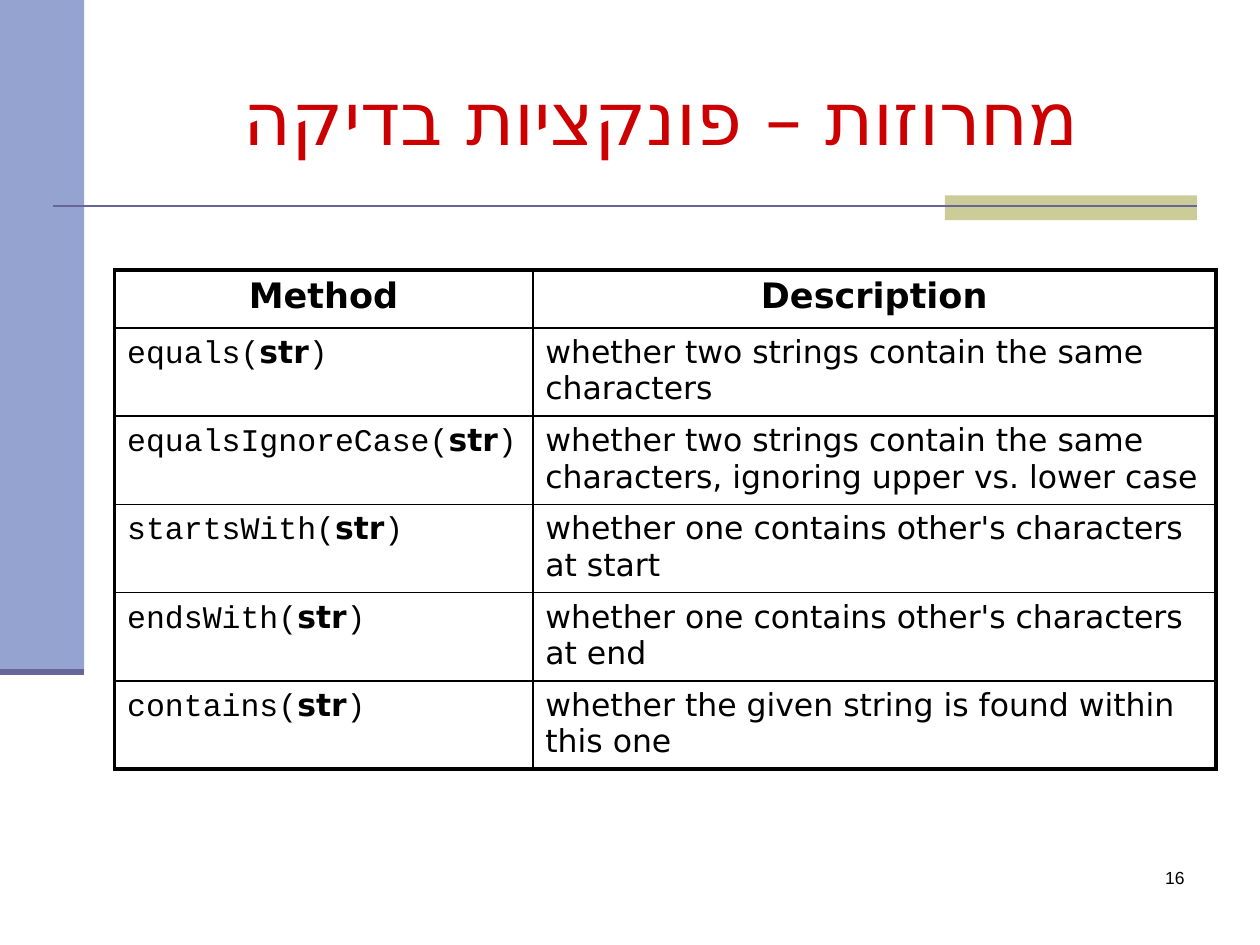
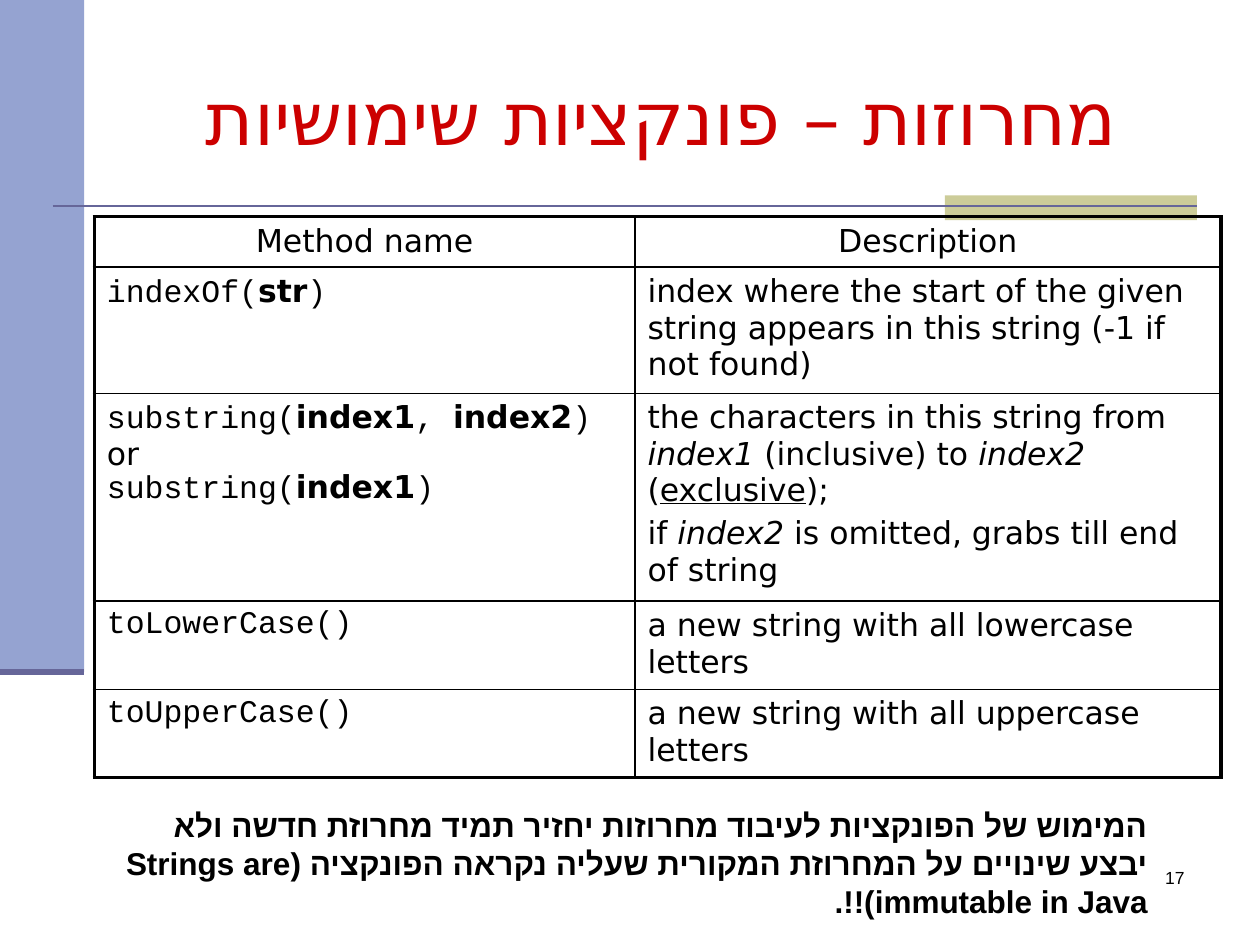
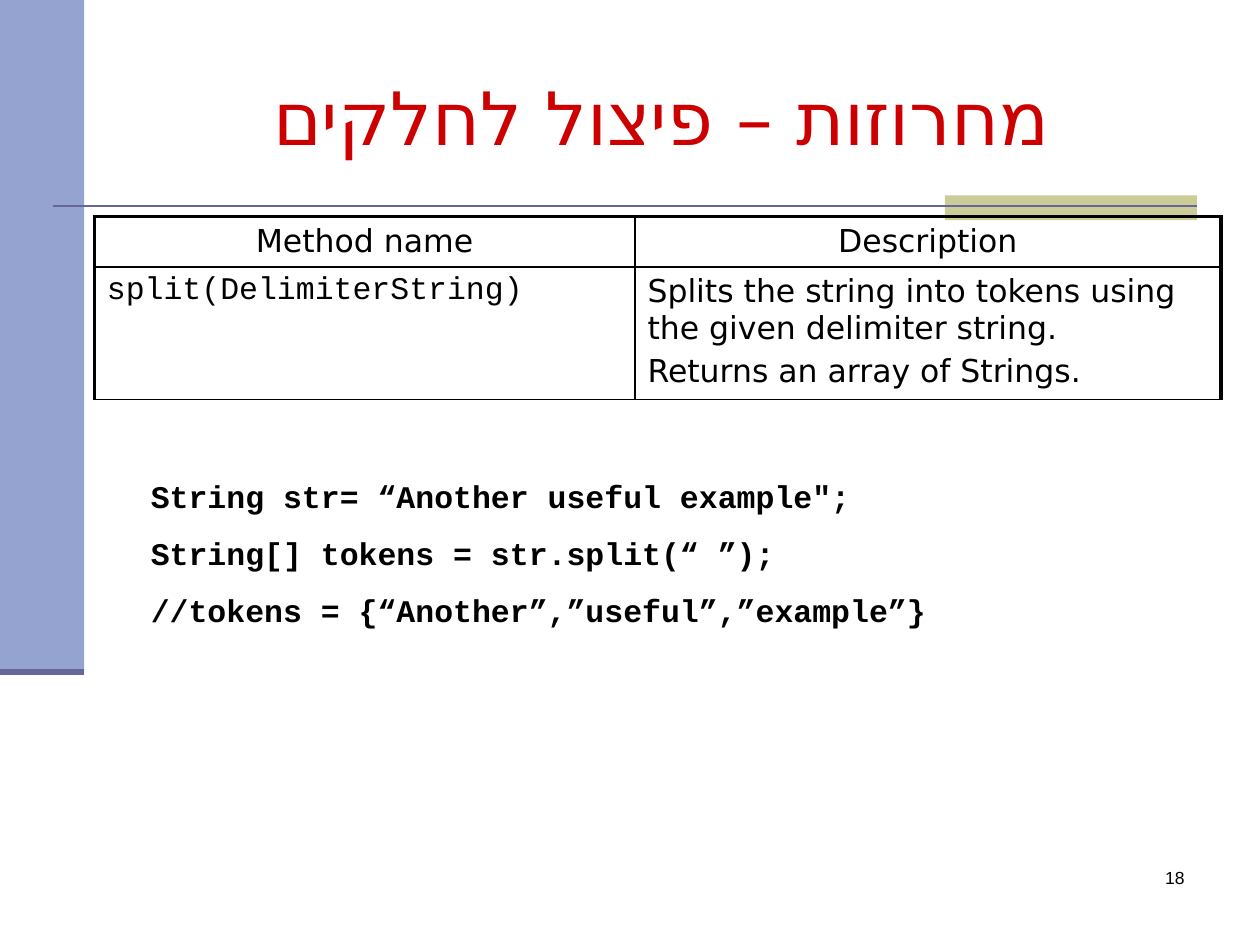
from pptx import Presentation
from pptx.dml.color import RGBColor
from pptx.enum.shapes import MSO_CONNECTOR, MSO_SHAPE
from pptx.enum.text import MSO_ANCHOR, PP_ALIGN
from pptx.oxml.ns import qn
from pptx.util import Cm, Pt
from lxml.etree import SubElement

COLORS = {
    "sidebar": "95A3D1",
    "accent": "CCCC99",
    "rule": "666699",
    "title": "CC0000",
    "text": "000000",
}
SANS = "DejaVu Sans"
MONO = "Courier New"
CODE = {"font": MONO}
ARGUMENT = {"bold": True}
ITALIC = {"italic": True}
UNDERLINE = {"underline": True}
PLAIN = {}
THICK, THIN = 2.25, 1


def color(name):
    """Return the named colour of the palette."""
    return RGBColor.from_string(COLORS[name])


def write_run(paragraph, text, font=SANS, hebrew_font=None, size=18, fill="text",
              bold=False, italic=False, underline=False):
    """Append formatted text to a paragraph."""
    run = paragraph.add_run()
    run.text = text
    run.font.name = font
    run.font.size = Pt(size)
    run.font.bold = bold
    run.font.italic = italic
    run.font.underline = underline
    run.font.color.rgb = color(fill)
    if hebrew_font:
        SubElement(run.font._element, qn("a:cs")).set("typeface", hebrew_font)


def add_text(slide, box, lines, align=PP_ALIGN.LEFT, anchor=MSO_ANCHOR.TOP,
             rtl=False, line_spacing=None, **text_format):
    """Add a wrapping text box with one paragraph for each line."""
    frame = slide.shapes.add_textbox(*map(Cm, box)).text_frame
    frame.word_wrap = True
    frame.vertical_anchor = anchor
    for index, line in enumerate(lines):
        paragraph = frame.add_paragraph() if index else frame.paragraphs[0]
        paragraph.alignment = align
        paragraph.line_spacing = line_spacing
        if rtl:
            paragraph._p.get_or_add_pPr().set("rtl", "1")
        write_run(paragraph, line, **text_format)


def add_band(slide, box, fill):
    """Add a plain filled rectangle."""
    shape = slide.shapes.add_shape(MSO_SHAPE.RECTANGLE, *map(Cm, box))
    shape.shadow.inherit = False
    shape.fill.solid()
    shape.fill.fore_color.rgb = color(fill)
    shape.line.fill.background()


def add_rule(slide, left, right, top, width):
    """Add a horizontal line."""
    rule = slide.shapes.add_connector(
        MSO_CONNECTOR.STRAIGHT, Cm(left), Cm(top), Cm(right), Cm(top))
    rule.line.color.rgb = color("rule")
    rule.line.width = Pt(width)
    SubElement(rule._element.spPr, qn("a:effectLst"))


def add_base_slide(presentation, title, number):
    """Add a slide with the shared bands, title and page number."""
    slide = presentation.slides.add_slide(presentation.slide_layouts[6])
    add_band(slide, (0, 0, 1.7, 13.55), "sidebar")
    add_band(slide, (19.05, 3.94, 5.08, 0.5), "accent")
    add_rule(slide, 1.06, 24.13, 4.15, 1.5)
    add_rule(slide, 0, 1.7, 13.55, 3.5)
    add_text(slide, (2.54, 0.76, 21.59, 3.18), [title], align=PP_ALIGN.CENTER,
             anchor=MSO_ANCHOR.MIDDLE, rtl=True, font="Times New Roman",
             hebrew_font=SANS, size=42, fill="title")
    add_text(slide, (18.85, 17.35, 5.28, 1.27), [str(number)],
             align=PP_ALIGN.RIGHT, font="Arial", size=10)
    return slide


def set_borders(cell, widths):
    """Draw the left, right, top and bottom borders of a cell."""
    properties = cell._tc.get_or_add_tcPr()
    for index, (side, width) in enumerate(zip("LRTB", widths)):
        border = SubElement(properties, qn(f"a:ln{side}"), w=str(Pt(width)))
        fill = SubElement(border, qn("a:solidFill"))
        SubElement(fill, qn("a:srgbClr"), val=COLORS["text"])
        properties.insert(index, border)


def fill_cell(cell, paragraphs, align=PP_ALIGN.LEFT, tight=False):
    """Write paragraphs of (text, format) pieces into an unfilled cell."""
    cell.fill.background()
    for index, pieces in enumerate(paragraphs):
        frame = cell.text_frame
        paragraph = frame.add_paragraph() if index else frame.paragraphs[0]
        paragraph.alignment = align
        if index:
            paragraph.space_before = Pt(3.6)
            paragraph.line_spacing = 0.7 if tight else None
        for text, text_format in pieces:
            write_run(paragraph, text, **text_format)


def add_method_table(slide, left, top, column_widths, row_heights, headings, rows,
                     heading_format=PLAIN, bottom=THICK):
    """Add a two-column table of methods and their descriptions."""
    table = slide.shapes.add_table(
        len(row_heights), len(column_widths), Cm(left), Cm(top),
        Cm(sum(column_widths)), Cm(sum(row_heights))).table
    table.first_row = table.horz_banding = False
    for column, width in zip(table.columns, column_widths):
        column.width = Cm(width)
    for row, height in zip(table.rows, row_heights):
        row.height = Cm(height)
    header = [[[(heading, heading_format)]] for heading in headings]
    last = len(rows)
    for row_index, contents in enumerate([header, *rows]):
        for column_index, paragraphs in enumerate(contents):
            cell = table.cell(row_index, column_index)
            fill_cell(cell, paragraphs, tight=column_index == 0,
                      align=PP_ALIGN.LEFT if row_index else PP_ALIGN.CENTER)
            set_borders(cell, (
                THIN if column_index else THICK,
                THICK if column_index else THIN,
                THIN if row_index else THICK,
                bottom if row_index == last else THIN))


def signature(name, *arguments):
    """Return the pieces of a method call with bold arguments."""
    pieces = [(f"{name}(", CODE)]
    for index, argument in enumerate(arguments):
        if index:
            pieces.append((", ", CODE))
        pieces.append((argument, ARGUMENT))
    return pieces + [(")", CODE)]


def plain(*lines):
    """Return one unformatted paragraph for each line."""
    return [[(line, PLAIN)] for line in lines]


def build_test_methods(presentation):
    """Build the slide of string test methods."""
    slide = add_base_slide(presentation, "מחרוזות – פונקציות בדיקה", 16)
    descriptions = {
        "equals": "whether two strings contain the same characters",
        "equalsIgnoreCase": "whether two strings contain the same characters, "
                            "ignoring upper vs. lower case",
        "startsWith": "whether one contains other's characters at start",
        "endsWith": "whether one contains other's characters at end",
        "contains": "whether the given string is found within this one",
    }
    rows = [([signature(name, "str")], plain(description))
            for name, description in descriptions.items()]
    add_method_table(slide, 2.31, 5.44, (8.43, 13.77), [1.17] + [1.73] * len(rows),
                     ("Method", "Description"), rows,
                     heading_format={"bold": True, "size": 20})


def build_useful_methods(presentation):
    """Build the slide of useful string methods with its note."""
    slide = add_base_slide(presentation, "מחרוזות – פונקציות שימושיות", 17)
    substring_calls = [
        signature("substring", "index1", "index2"),
        [("or", PLAIN)],
        signature("substring", "index1"),
    ]
    substring_description = [
        [("the characters in this string from ", PLAIN), ("index1", ITALIC),
         (" (inclusive) to ", PLAIN), ("index2", ITALIC), (" (", PLAIN),
         ("exclusive", UNDERLINE), (");", PLAIN)],
        [("if ", PLAIN), ("index2", ITALIC),
         (" is omitted, grabs till end of string", PLAIN)],
    ]
    rows = [
        ([signature("indexOf", "str")],
         plain("index where the start of the given string appears in this string "
               "(-1 if not found)")),
        (substring_calls, substring_description),
    ]
    for case in ("Lower", "Upper"):
        rows.append(([[(f"to{case}Case()", CODE)]],
                     plain(f"a new string with all {case.lower()}case letters")))
    add_method_table(slide, 1.9, 4.37, (10.9, 11.81), (0.99, 2.46, 4.07, 1.73, 1.73),
                     ("Method name", "Description"), rows)
    note = ("המימוש של הפונקציות לעיבוד מחרוזות יחזיר תמיד מחרוזת חדשה ולא יבצע "
            "שינויים על המחרוזת המקורית שעליה נקראה הפונקציה "
            "(Strings are immutable in Java)!!.")
    add_text(slide, (1.9, 16.13, 21.49, 2.57), [note], align=PP_ALIGN.RIGHT,
             rtl=True, font="Arial", hebrew_font="Arial", bold=True)


def build_split_method(presentation):
    """Build the slide of the split method with its code example."""
    slide = add_base_slide(presentation, "מחרוזות – פיצול לחלקים", 18)
    rows = [([[("split(DelimiterString)", CODE)]],
             plain("Splits the string into tokens using the given delimiter string.",
                   "Returns an array of Strings."))]
    add_method_table(slide, 1.9, 4.37, (10.9, 11.81), (0.99, 2.6),
                     ("Method name", "Description"), rows, bottom=THIN)
    example = (
        "String str= “Another useful example\";",
        "String[] tokens = str.split(“ ”);",
        "//tokens = {“Another”,”useful”,”example”}",
    )
    add_text(slide, (2.79, 9.12, 18, 3.71), example, line_spacing=1.5,
             font=MONO, bold=True)


def main():
    """Build and save the presentation."""
    presentation = Presentation()
    presentation.slide_width = Cm(25.4)
    presentation.slide_height = Cm(19.05)
    build_test_methods(presentation)
    build_useful_methods(presentation)
    build_split_method(presentation)
    presentation.save("out.pptx")


if __name__ == "__main__":
    main()
